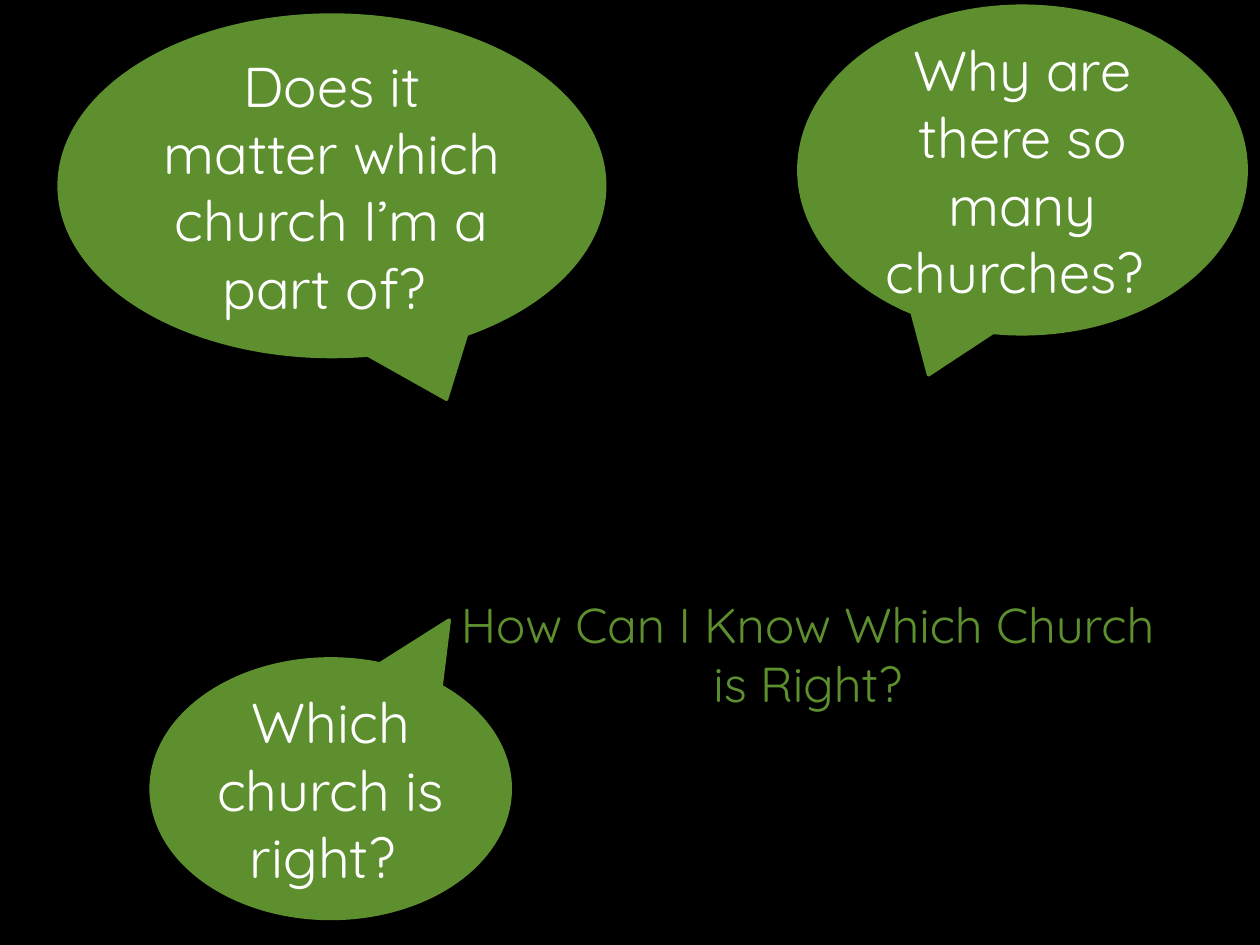
from dataclasses import dataclass

from pptx import Presentation
from pptx.dml.color import RGBColor
from pptx.enum.shapes import MSO_SHAPE
from pptx.enum.text import MSO_ANCHOR, PP_ALIGN
from pptx.slide import Slide
from pptx.text.text import TextFrame
from pptx.util import Inches, Pt

BLACK = RGBColor(0x00, 0x00, 0x00)
GREEN = RGBColor(0x5D, 0x8F, 0x2F)
WHITE = RGBColor(0xFF, 0xFF, 0xFF)
FONT = "Quicksand"
CALLOUT = MSO_SHAPE.OVAL_CALLOUT
CENTER = PP_ALIGN.CENTER
TOP = MSO_ANCHOR.TOP
MIDDLE = MSO_ANCHOR.MIDDLE
SECTION_LAYOUT = 2


@dataclass(frozen=True)
class Bubble:
    text: str
    left: float
    top: float
    width: float
    height: float
    tail_x: float  # tail tip from the centre, as a share of the width
    tail_y: float  # tail tip from the centre, as a share of the height


BUBBLES = [
    Bubble("Why are there so many churches? ", 6.34, 0.05, 3.55, 2.6, -0.21, 0.625),
    Bubble("Does it matter which church I’m a part of? ", 0.47, 0.12, 4.33, 2.71, 0.21, 0.625),
    Bubble("Which church is right? ", 1.2, 5.23, 2.85, 2.06, 0.33, -0.65),
]


def write_centered(frame: TextFrame, text: str, size: int, color: RGBColor) -> None:
    frame.text = text
    frame.word_wrap = True
    para = frame.paragraphs[0]
    para.alignment = CENTER
    para.space_before = Pt(0)
    font = para.runs[0].font
    font.name = FONT
    font.size = Pt(size)
    font.color.rgb = color


def add_bubble(slide: Slide, bubble: Bubble) -> None:
    shape = slide.shapes.add_shape(
        CALLOUT,
        Inches(bubble.left), Inches(bubble.top),
        Inches(bubble.width), Inches(bubble.height),
    )
    shape.adjustments[0] = bubble.tail_x
    shape.adjustments[1] = bubble.tail_y
    shape.shadow.inherit = False
    shape.fill.solid()
    shape.fill.fore_color.rgb = GREEN
    shape.line.color.rgb = GREEN
    shape.line.width = Pt(2)
    shape.text_frame.vertical_anchor = MIDDLE
    write_centered(shape.text_frame, bubble.text, 32, WHITE)


def add_question(slide: Slide) -> None:
    """Fill the body placeholder and drop the unused title."""
    title = slide.shapes.title
    title.element.getparent().remove(title.element)
    body = slide.placeholders[1]
    body.left, body.top = Inches(3.54), Inches(4.67)
    body.width, body.height = Inches(5.74), Inches(1.12)
    body.text_frame.vertical_anchor = TOP
    write_centered(body.text_frame, "How Can I Know Which Church is Right?", 28, GREEN)


def main() -> None:
    deck = Presentation()
    deck.slide_width = Inches(10)
    deck.slide_height = Inches(7.5)
    slide = deck.slides.add_slide(deck.slide_layouts[SECTION_LAYOUT])
    slide.background.fill.solid()
    slide.background.fill.fore_color.rgb = BLACK
    add_question(slide)
    for bubble in BUBBLES:
        add_bubble(slide, bubble)
    deck.save("out.pptx")


if __name__ == "__main__":
    main()
